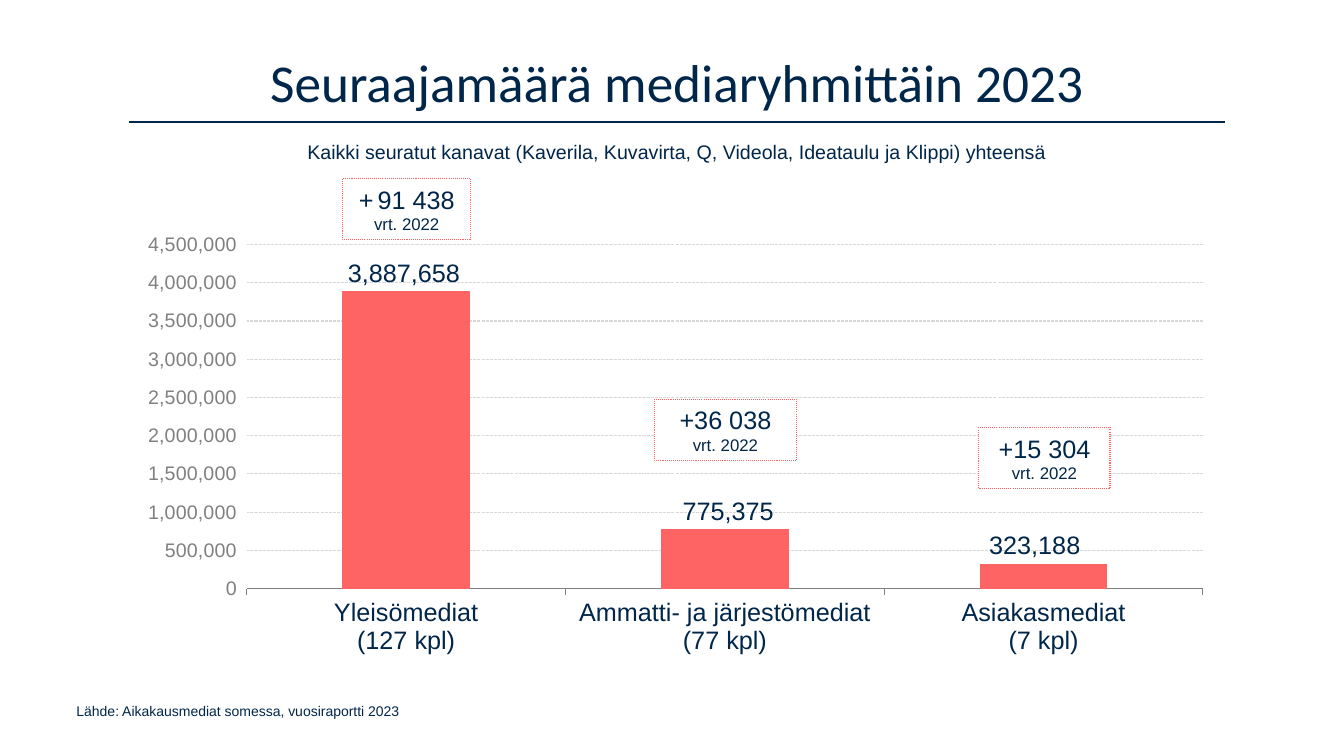
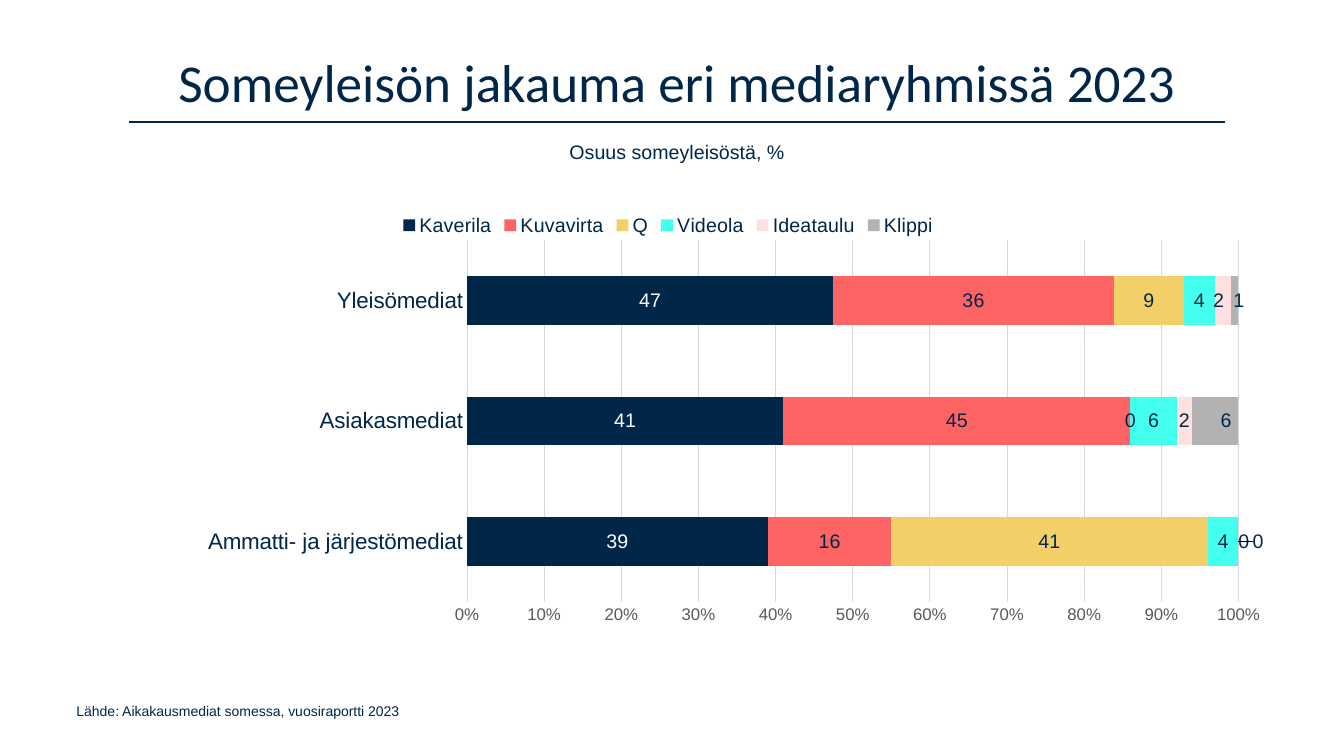
"""Build two slides on the social media audience of magazine groups."""

from dataclasses import dataclass, field

from lxml.etree import SubElement
from pptx import Presentation
from pptx.chart.chart import Chart
from pptx.chart.data import CategoryChartData
from pptx.dml.color import RGBColor
from pptx.dml.line import LineFormat
from pptx.enum.chart import XL_CHART_TYPE as ChartType
from pptx.enum.chart import XL_LABEL_POSITION as LabelPosition
from pptx.enum.chart import XL_LEGEND_POSITION as LegendPosition
from pptx.enum.chart import XL_TICK_MARK as TickMark
from pptx.enum.dml import MSO_LINE as Dash
from pptx.enum.shapes import MSO_CONNECTOR as Connector
from pptx.enum.shapes import MSO_SHAPE as Preset
from pptx.enum.text import MSO_ANCHOR as Anchor
from pptx.enum.text import PP_ALIGN as Align
from pptx.oxml import parse_xml
from pptx.oxml.ns import nsdecls, qn
from pptx.oxml.xmlchemy import BaseOxmlElement
from pptx.slide import Slide
from pptx.text.text import Font
from pptx.util import Emu, Inches, Pt

COLORS = {
    "navy": "002649",
    "coral": "FF6464",
    "yellow": "F3CF67",
    "turquoise": "43FFED",
    "pink": "FFE0E0",
    "silver": "B2B2B2",
    "white": "FFFFFF",
    "grid": "D9D9D9",
    "gray": "808080",
    "dark gray": "595959",
}
BODY_FONT = "Arial"
TITLE_FONT = "Calibri"
ROWS = 54
CELL = Inches(7.5) // ROWS
CONTENT_LEFT, CONTENT_WIDTH = 9.22, 78.26
RULE_ROW = 8.71
SOURCE = "Lähde: Aikakausmediat somessa, vuosiraportti 2023"


@dataclass(frozen=True)
class Box:
    """Place in grid columns and rows."""

    left: float
    top: float
    width: float
    height: float

    def lengths(self) -> tuple[Emu, ...]:
        """Return left, top, width and height as slide lengths."""
        return tuple(map(grid, (self.left, self.top, self.width, self.height)))


@dataclass(frozen=True)
class Callout:
    """Growth box above a column."""

    box: Box
    growth: str
    sign_spacing: int = 0


@dataclass(frozen=True)
class Series:
    """Chart series with label shifts in percent of the chart width."""

    name: str
    values: tuple[int, ...]
    color: str
    label_color: str = "navy"
    label_shifts: dict[int, float] = field(default_factory=dict)


@dataclass(frozen=True)
class AxisStyle:
    """Look of a chart axis."""

    size: float
    color: str
    tick: TickMark
    line: str | None = None


@dataclass(frozen=True)
class ChartPlan:
    """Content and look of a bar or column chart."""

    kind: ChartType
    box: Box
    plot_area: tuple[float, float, float, float]
    categories: tuple[str, ...]
    series: tuple[Series, ...]
    category_axis: AxisStyle
    value_axis: AxisStyle
    axis_format: str
    label_format: str
    label_size: float
    label_position: LabelPosition
    grid_dash: Dash
    overlap: int = 0
    maximum: float | None = None
    unit: float | None = None
    legend_at: tuple[float, float] | None = None


@dataclass(frozen=True)
class Page:
    """Content of one slide."""

    title: str
    subtitle: str
    chart: ChartPlan
    callouts: tuple[Callout, ...] = ()


TITLE_BOX = Box(CONTENT_LEFT, 3.53, CONTENT_WIDTH, 5.11)
SUBTITLE_BOX = Box(CONTENT_LEFT, 9.65, CONTENT_WIDTH, 2.45)
SOURCE_BOX = Box(4.75, 49.82, 47.38, 3.17)

FOLLOWERS = ChartPlan(
    ChartType.COLUMN_CLUSTERED,
    Box(9.07, 16.06, 78.48, 31.39),
    (10.9, 4.5, 87, 78.3),
    ("Yleisömediat\n(127 kpl)", "Ammatti- ja järjestömediat\n(77 kpl)", "Asiakasmediat\n(7 kpl)"),
    (Series("Series 1", (3887658, 775375, 323188), "coral", label_shifts={0: -0.2, 1: 0.3, 2: -0.8}),),
    AxisStyle(18, "navy", TickMark.OUTSIDE, "gray"),
    AxisStyle(14, "gray", TickMark.OUTSIDE),
    "#,##0",
    "#,##0",
    18,
    LabelPosition.OUTSIDE_END,
    Dash.SQUARE_DOT,
    maximum=4500000,
    unit=500000,
)
SHARES = ChartPlan(
    ChartType.BAR_STACKED_100,
    Box(13.32, 13.9, CONTENT_WIDTH, 31.32),
    (25.6, 10.4, 70.4, 82.5),
    ("Ammatti- ja järjestömediat", "Asiakasmediat", "Yleisömediat"),
    (
        Series("Kaverila", (39, 41, 47), "navy", "white"),
        Series("Kuvavirta", (16, 45, 36), "coral"),
        Series("Q", (41, 0, 9), "yellow"),
        Series("Videola", (4, 6, 4), "turquoise"),
        Series("Ideataulu", (0, 2, 2), "pink", label_shifts={0: 0.5, 2: -0.4}),
        Series("Klippi", (0, 6, 1), "silver", label_shifts={0: 1.8, 1: 1, 2: 0.4}),
    ),
    AxisStyle(16, "navy", TickMark.NONE, "grid"),
    AxisStyle(12, "dark gray", TickMark.NONE),
    "0%",
    "0",
    14,
    LabelPosition.CENTER,
    Dash.SOLID,
    overlap=100,
    legend_at=(19.2, 3.6),
)
PAGES = (
    Page(
        "Seuraajamäärä mediaryhmittäin 2023",
        "Kaikki seuratut kanavat (Kaverila, Kuvavirta, Q, Videola, Ideataulu ja Klippi) yhteensä",
        FOLLOWERS,
        (
            Callout(Box(24.48, 12.74, 9.14, 4.39), "91 438", 300),
            Callout(Box(46.73, 28.51, 10.15, 4.39), "36 038"),
            Callout(Box(69.91, 30.53, 9.36, 4.39), "15 304"),
        ),
    ),
    Page("Someyleisön jakauma eri mediaryhmissä 2023", "Osuus someyleisöstä, %", SHARES),
)


def grid(cells: float) -> Emu:
    """Turn grid cells into a slide length."""
    return Emu(round(cells * CELL))


def rgb(name: str) -> RGBColor:
    """Look up a colour."""
    return RGBColor.from_string(COLORS[name])


def set_font(font: Font, size: float, color: str = "navy", name: str = BODY_FONT) -> None:
    """Style a font."""
    font.size, font.name = Pt(size), name
    font.color.rgb = rgb(color)


def set_line(line: LineFormat, color: str, width: float = 0.75, dash: Dash = Dash.SOLID) -> None:
    """Style a line."""
    line.color.rgb = rgb(color)
    line.width, line.dash_style = Pt(width), dash


def add_text(slide: Slide, box: Box, text: str, size: float, align: Align = Align.CENTER,
             name: str = BODY_FONT, anchor: Anchor = Anchor.TOP, spacing: float = 1) -> None:
    """Add a one-paragraph text box."""
    frame = slide.shapes.add_textbox(*box.lengths()).text_frame
    frame.word_wrap, frame.vertical_anchor = True, anchor
    paragraph = frame.paragraphs[0]
    paragraph.text, paragraph.alignment, paragraph.line_spacing = text, align, spacing
    set_font(paragraph.font, size, name=name)


def add_frame(slide: Slide, page: Page) -> None:
    """Add the rule, source line, title and subtitle."""
    right = CONTENT_LEFT + CONTENT_WIDTH
    rule = slide.shapes.add_connector(
        Connector.STRAIGHT, *map(grid, (CONTENT_LEFT, RULE_ROW, right, RULE_ROW)))
    set_line(rule.line, "navy", 1)
    SubElement(rule._element.spPr, qn("a:effectLst"))
    add_text(slide, SOURCE_BOX, SOURCE, 10, Align.LEFT)
    add_text(slide, TITLE_BOX, page.title, 38, name=TITLE_FONT, anchor=Anchor.MIDDLE, spacing=0.9)
    add_text(slide, SUBTITLE_BOX, page.subtitle, 14)


def add_callout(slide: Slide, callout: Callout) -> None:
    """Add a dotted growth box."""
    shape = slide.shapes.add_shape(Preset.RECTANGLE, *callout.box.lengths())
    shape.shadow.inherit = False
    shape.fill.solid()
    shape.fill.fore_color.rgb = rgb("white")
    set_line(shape.line, "coral", dash=Dash.ROUND_DOT)
    paragraph = shape.text_frame.paragraphs[0]
    paragraph.alignment = Align.CENTER
    set_font(paragraph.font, 18)
    sign = paragraph.add_run()
    sign.text = "+"
    sign._r.get_or_add_rPr().set("spc", str(callout.sign_spacing))
    paragraph.add_run().text = callout.growth
    paragraph.add_line_break()
    note = paragraph.add_run()
    note.text = "vrt. 2022"
    note.font.size = Pt(12)


def set_layout(element: BaseOxmlElement, index: int, settings: dict[str, str | float]) -> None:
    """Give a chart part a manual layout."""
    for layout in element.findall(qn("c:layout")):
        element.remove(layout)
    items = "".join(f'<c:{key} val="{value}"/>' for key, value in settings.items())
    element.insert(index, parse_xml(
        f'<c:layout {nsdecls("c")}><c:manualLayout>{items}</c:manualLayout></c:layout>'))


def edge_layout(*shares: float) -> dict[str, str | float]:
    """Describe a place by percents of the chart."""
    places = {key: share / 100 for key, share in zip("xywh", shares)}
    return {"xMode": "edge", "yMode": "edge"} | places


def style_axes(chart: Chart, plan: ChartPlan) -> None:
    """Style both axes and the grid lines."""
    for axis, style in ((chart.category_axis, plan.category_axis), (chart.value_axis, plan.value_axis)):
        axis.major_tick_mark, axis.minor_tick_mark = style.tick, TickMark.NONE
        set_font(axis.tick_labels.font, style.size, style.color)
        if style.line:
            set_line(axis.format.line, style.line)
        else:
            axis.format.line.fill.background()
    axis = chart.value_axis
    axis.tick_labels.number_format, axis.tick_labels.number_format_is_linked = plan.axis_format, False
    axis.maximum_scale, axis.major_unit = plan.maximum, plan.unit
    set_line(axis.major_gridlines.format.line, "grid", dash=plan.grid_dash)


def style_series(chart: Chart, plan: ChartPlan) -> None:
    """Colour the bars and set their labels."""
    for series, style in zip(chart.plots[0].series, plan.series):
        series.format.fill.solid()
        series.format.fill.fore_color.rgb = rgb(style.color)
        labels = series.data_labels
        labels.show_value, labels.position = True, plan.label_position
        labels.number_format, labels.number_format_is_linked = plan.label_format, False
        set_font(labels.font, plan.label_size, style.label_color)
        for index, shift in style.label_shifts.items():
            label = series.points[index].data_label
            label.position = plan.label_position
            set_font(label.font, plan.label_size, style.label_color)
            element = series._element.xpath(f".//c:dLbl[c:idx/@val='{index}']")[0]
            set_layout(element, 1, {"x": shift / 100, "y": 0})


def add_chart(slide: Slide, plan: ChartPlan) -> None:
    """Add a styled chart."""
    data = CategoryChartData(number_format=plan.label_format)
    data.categories = plan.categories
    for series in plan.series:
        data.add_series(series.name, series.values)
    chart = slide.shapes.add_chart(plan.kind, *plan.box.lengths(), data).chart
    set_font(chart.font, plan.label_size)
    chart.has_title, chart.has_legend = False, plan.legend_at is not None
    plot = chart.plots[0]
    plot.gap_width, plot.overlap, plot.vary_by_categories = 150, plan.overlap, False
    style_axes(chart, plan)
    style_series(chart, plan)
    plot_area = chart._chartSpace.chart.plotArea
    set_layout(plot_area, 0, {"layoutTarget": "inner"} | edge_layout(*plan.plot_area))
    if plan.legend_at:
        chart.legend.position, chart.legend.include_in_layout = LegendPosition.TOP, False
        set_font(chart.legend.font, 14)
        set_layout(chart.legend._element, 1, edge_layout(*plan.legend_at))


def main() -> None:
    """Build and save the presentation."""
    presentation = Presentation()
    presentation.slide_width, presentation.slide_height = Inches(13.33), grid(ROWS)
    for page in PAGES:
        slide = presentation.slides.add_slide(presentation.slide_layouts[6])
        add_frame(slide, page)
        add_chart(slide, page.chart)
        for callout in page.callouts:
            add_callout(slide, callout)
    presentation.save("out.pptx")


if __name__ == "__main__":
    main()
